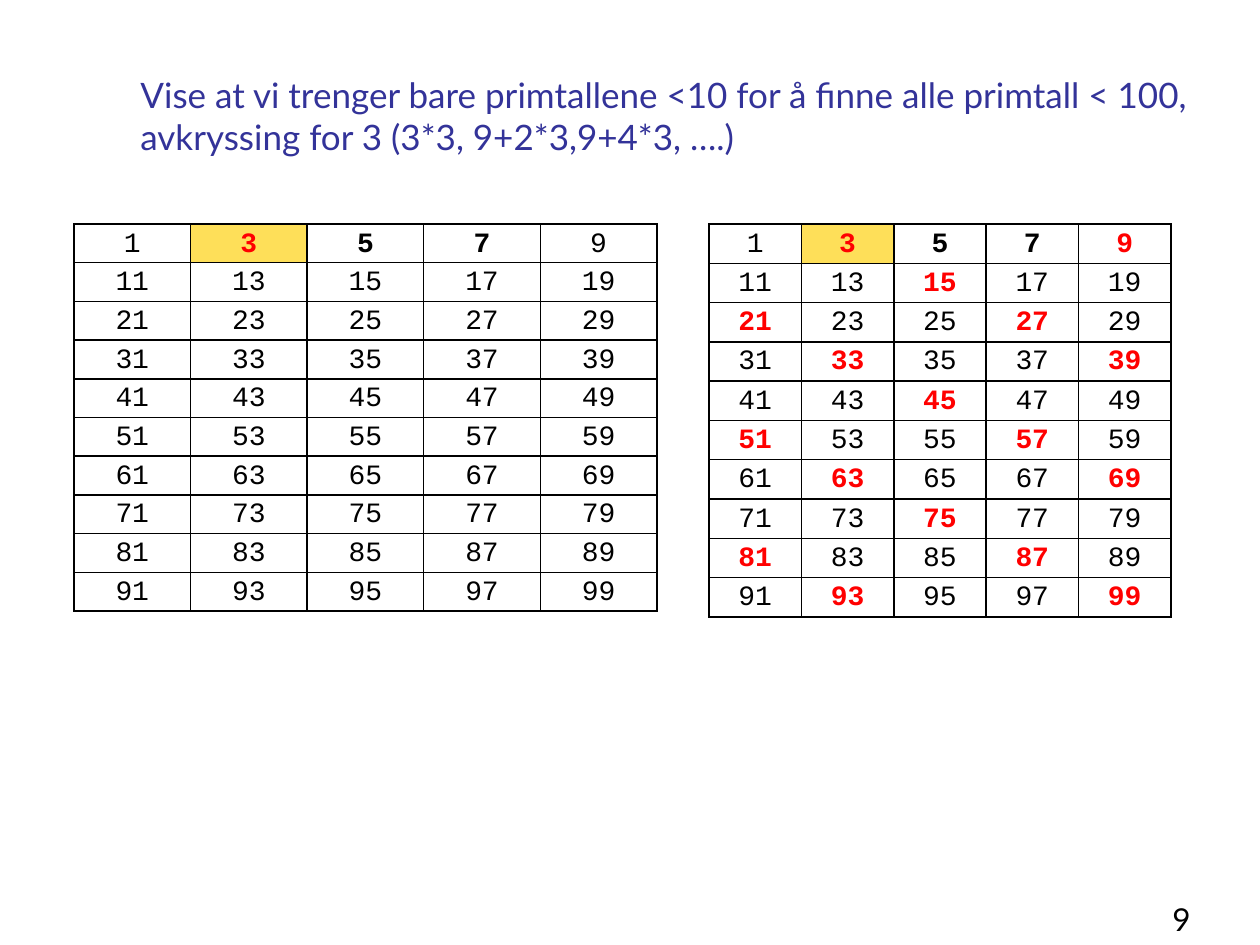
from lxml import etree
from pptx import Presentation
from pptx.dml.color import RGBColor
from pptx.enum.text import MSO_ANCHOR, PP_ALIGN
from pptx.oxml.ns import qn
from pptx.util import Pt

SCALE = 914400 / 126
BLACK = RGBColor(0x00, 0x00, 0x00)
BLUE = RGBColor(0x33, 0x33, 0x99)
RED = RGBColor(0xFF, 0x00, 0x00)
GOLD = RGBColor(0xFE, 0xDF, 0x59)
LEFT, RIGHT, CENTER = PP_ALIGN.LEFT, PP_ALIGN.RIGHT, PP_ALIGN.CENTER
BOTTOM = MSO_ANCHOR.BOTTOM
TITLE = ("Vise at vi trenger bare primtallene <10 for å finne alle primtall < 100, "
         "avkryssing for 3 (3*3, 9+2*3,9+4*3, ….)")
ROWS, COLS = 10, 5


def px(n):
    return round(n * SCALE)


def style(par, font, size, color, align):
    par.alignment = align
    par.font.name = font
    par.font.size = Pt(size)
    par.font.color.rgb = color


prs = Presentation()
prs.slide_width, prs.slide_height = px(1260), px(945)
slide = prs.slides.add_slide(prs.slide_layouts[6])

texts = [
    (TITLE, (128, 49, 1075, 115), 20, BLUE, LEFT),
    ("9", (941, 881, 262, 63), 18, BLACK, RIGHT),
]
for text, box, size, color, align in texts:
    frame = slide.shapes.add_textbox(*map(px, box)).text_frame
    frame.word_wrap = True
    frame.vertical_anchor = BOTTOM
    frame.text = text
    style(frame.paragraphs[0], "Lato", size, color, align)

grids = [
    ((74, 224, 583, 387), {3}),
    ((709, 224, 462, 393), set(range(3, 100, 6))),
]
for box, marked in grids:
    x, y, w, h = map(px, box)
    table = slide.shapes.add_table(ROWS, COLS, x, y, w, h).table
    table.first_row = table.horz_banding = False
    for col in table.columns:
        col.width = w // COLS
    for row in table.rows:
        row.height = h // ROWS
    for i, cell in enumerate(table.iter_cells()):
        num = 2 * i + 1
        cell.margin_left = cell.margin_right = px(9)
        cell.margin_top = cell.margin_bottom = 0
        props = cell._tc.get_or_add_tcPr()
        for side in ("lnL", "lnR", "lnT", "lnB"):
            line = etree.SubElement(props, qn("a:" + side), w=str(Pt(1)))
            fill = etree.SubElement(line, qn("a:solidFill"))
            etree.SubElement(fill, qn("a:srgbClr"), val=str(BLACK))
        if num == 3:
            cell.fill.solid()
            cell.fill.fore_color.rgb = GOLD
        else:
            cell.fill.background()
        cell.text = str(num)
        par = cell.text_frame.paragraphs[0]
        par.line_spacing = 1.15
        style(par, "Courier New", 16, RED if num in marked else BLACK, CENTER)
        par.font.bold = num in marked or num in (5, 7)

prs.save("out.pptx")
